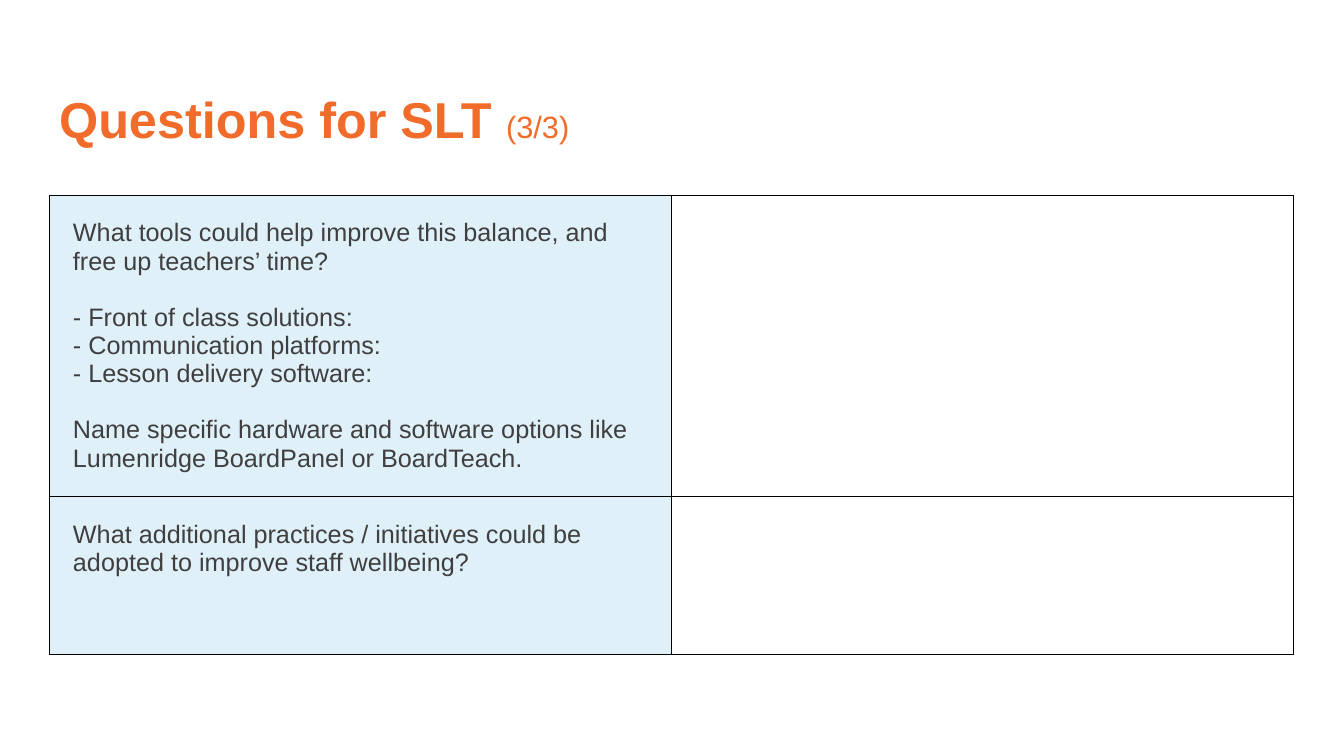
from lxml import etree
from pptx import Presentation
from pptx import util as u
from pptx.dml.color import RGBColor
from pptx.enum import text
from pptx.oxml import ns

PX = 12192000 / 1344
ORANGE = RGBColor(0xF1, 0x6B, 0x2B)
GREY = RGBColor(0x3F, 0x3F, 0x3F)
PALE_BLUE = RGBColor(0xE0, 0xF0, 0xF9)
WHITE = RGBColor(0xFF, 0xFF, 0xFF)
BORDER = "000000"


def px(length):
    return u.Emu(round(length * PX))


def add_borders(cell):
    properties = cell._tc.get_or_add_tcPr()
    for side in ("a:lnL", "a:lnR", "a:lnT", "a:lnB"):
        line = etree.SubElement(properties, ns.qn(side), w=str(u.Pt(0.75)))
        fill = etree.SubElement(line, ns.qn("a:solidFill"))
        etree.SubElement(fill, ns.qn("a:srgbClr"), val=BORDER)


presentation = Presentation()
presentation.slide_width = px(1344)
presentation.slide_height = px(756)
slide = presentation.slides.add_slide(presentation.slide_layouts[5])

# Title
title = slide.shapes.title
title.left, title.top, title.width, title.height = px(49), px(49), px(1159), px(146)
title.text_frame.vertical_anchor = text.MSO_ANCHOR.MIDDLE
title.text_frame.auto_size = text.MSO_AUTO_SIZE.NONE
paragraph = title.text_frame.paragraphs[0]
paragraph.alignment = text.PP_ALIGN.LEFT
paragraph.line_spacing = 0.9
for words, size, bold in (("Questions for SLT ", 36, True), ("(3/3)", 22, False)):
    run = paragraph.add_run()
    run.text = words
    run.font.name = "Arial"
    run.font.size = u.Pt(size)
    run.font.bold = bold
    run.font.color.rgb = ORANGE

# Questions on the left, room for answers on the right
# Each question is a list of (words, space before in points)
questions = [
    [
        ("What tools could help improve this balance, and free up teachers’ time?", 0),
        ("- Front of class solutions:", 20),
        ("- Communication platforms:", 0),
        ("- Lesson delivery software:", 0),
        ("Name specific hardware and software options like "
         "Lumenridge BoardPanel or BoardTeach.", 20),
    ],
    [("What additional practices / initiatives could be adopted "
      "to improve staff wellbeing?", 0)],
]
row_heights = [301, 158]
table = slide.shapes.add_table(
    2, 2, px(49), px(195), px(1244), px(sum(row_heights))
).table
table.first_row = False
table.horz_banding = False
for column in table.columns:
    column.width = px(622)

for row, height, question in zip(table.rows, row_heights, questions):
    row.height = px(height)
    for cell, colour in zip(row.cells, (PALE_BLUE, WHITE)):
        add_borders(cell)
        cell.fill.solid()
        cell.fill.fore_color.rgb = colour

    cell = row.cells[0]
    cell.margin_left = cell.margin_right = px(24)
    cell.margin_top = cell.margin_bottom = px(24)
    for index, (words, space) in enumerate(question):
        frame = cell.text_frame
        paragraph = frame.add_paragraph() if index else frame.paragraphs[0]
        paragraph.space_before = u.Pt(space)
        run = paragraph.add_run()
        run.text = words
        run.font.name = "Arial"
        run.font.size = u.Pt(18)
        run.font.color.rgb = GREY

presentation.save("out.pptx")
